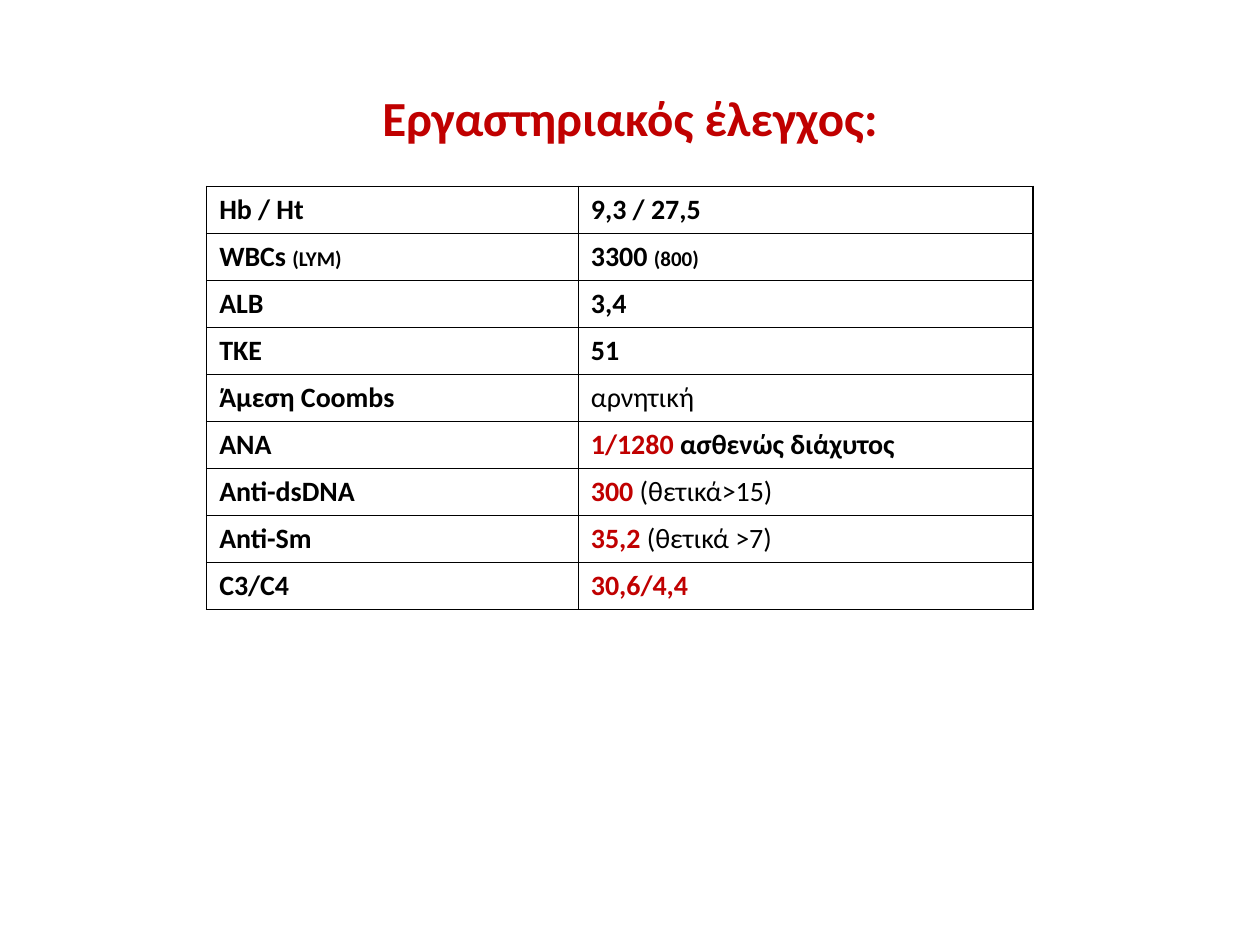
from dataclasses import dataclass

from lxml.etree import SubElement
from pptx import Presentation
from pptx.dml.color import RGBColor
from pptx.enum.text import MSO_ANCHOR, PP_ALIGN
from pptx.oxml import parse_xml
from pptx.oxml.ns import nsdecls, qn
from pptx.util import Inches, Pt


@dataclass(frozen=True)
class Theme:
    font: str = "Calibri"
    ink: str = "000000"
    accent: str = "C00000"
    paper: str = "FFFFFF"
    title_size: int = 28
    body_size: int = 16
    note_size: int = 12
    border_width: int = 1


THEME = Theme()
SLIDE_WIDTH, SLIDE_HEIGHT = Inches(10), Inches(7.5)

# Run styles: size, colour, bold
STRONG = (THEME.body_size, THEME.ink, True)
PLAIN = (THEME.body_size, THEME.ink, False)
NOTE = (THEME.note_size, THEME.ink, True)
ABNORMAL = (THEME.body_size, THEME.accent, True)
HEADING = (THEME.title_size, THEME.accent, True)

# Each test: label runs, result runs
LAB_RESULTS = [
    ([("Hb / Ht", STRONG)], [("9,3 / 27,5", STRONG)]),
    ([("WBCs ", STRONG), ("(LYM)", NOTE)], [("3300 ", STRONG), ("(800)", NOTE)]),
    ([("ALB", STRONG)], [("3,4", STRONG)]),
    ([("TKE", STRONG)], [("51", STRONG)]),
    ([("Άμεση Coombs", STRONG)], [("αρνητική", PLAIN)]),
    ([("ANA", STRONG)], [("1/1280 ", ABNORMAL), ("ασθενώς διάχυτος", STRONG)]),
    ([("Anti-dsDNA", STRONG)], [("300 ", ABNORMAL), ("(θετικά>15)", PLAIN)]),
    ([("Anti-Sm", STRONG)], [("35,2 ", ABNORMAL), ("(θετικά >7)", PLAIN)]),
    ([("C3/C4", STRONG)], [("30,6/4,4", ABNORMAL)]),
]
COLUMN_WIDTHS = (Inches(2.95), Inches(3.61))
TABLE_HEIGHT = Inches(3.36)


def write_runs(paragraph, runs):
    for wording, (size, colour, bold) in runs:
        run = paragraph.add_run()
        run.text = wording
        run.font.name = THEME.font
        run.font.size = Pt(size)
        run.font.bold = bold
        run.font.color.rgb = RGBColor.from_string(colour)


def draw_borders(cell):
    properties = cell._tc.get_or_add_tcPr()
    for position, side in enumerate(("lnL", "lnR", "lnT", "lnB")):
        border = parse_xml(f'<a:{side} {nsdecls("a")} w="{Pt(THEME.border_width)}"/>')
        fill = SubElement(border, qn("a:solidFill"))
        SubElement(fill, qn("a:srgbClr"), val=THEME.ink)
        properties.insert(position, border)


def add_heading(slide, wording):
    heading = slide.shapes.add_textbox(
        int(SLIDE_WIDTH * 0.05), int(SLIDE_HEIGHT * 0.04),
        int(SLIDE_WIDTH * 0.9), Inches(1.25))
    frame = heading.text_frame
    frame.word_wrap = True
    frame.vertical_anchor = MSO_ANCHOR.MIDDLE
    frame.paragraphs[0].alignment = PP_ALIGN.CENTER
    write_runs(frame.paragraphs[0], [(wording, HEADING)])


def add_lab_table(slide):
    lab_table = slide.shapes.add_table(
        len(LAB_RESULTS), len(COLUMN_WIDTHS), Inches(1.64), Inches(1.48),
        sum(COLUMN_WIDTHS), TABLE_HEIGHT).table
    lab_table.first_row = False
    lab_table.horz_banding = False
    for column, width in zip(lab_table.columns, COLUMN_WIDTHS):
        column.width = width
    for row, test in zip(lab_table.rows, LAB_RESULTS):
        for cell, runs in zip(row.cells, test):
            cell.fill.background()
            draw_borders(cell)
            write_runs(cell.text_frame.paragraphs[0], runs)


def main():
    deck = Presentation()
    deck.slide_width, deck.slide_height = SLIDE_WIDTH, SLIDE_HEIGHT
    slide = deck.slides.add_slide(deck.slide_layouts[6])
    slide.background.fill.solid()
    slide.background.fill.fore_color.rgb = RGBColor.from_string(THEME.paper)

    # Heading above the laboratory findings
    add_heading(slide, "Εργαστηριακός έλεγχος:")
    add_lab_table(slide)
    deck.save("out.pptx")


if __name__ == "__main__":
    main()
